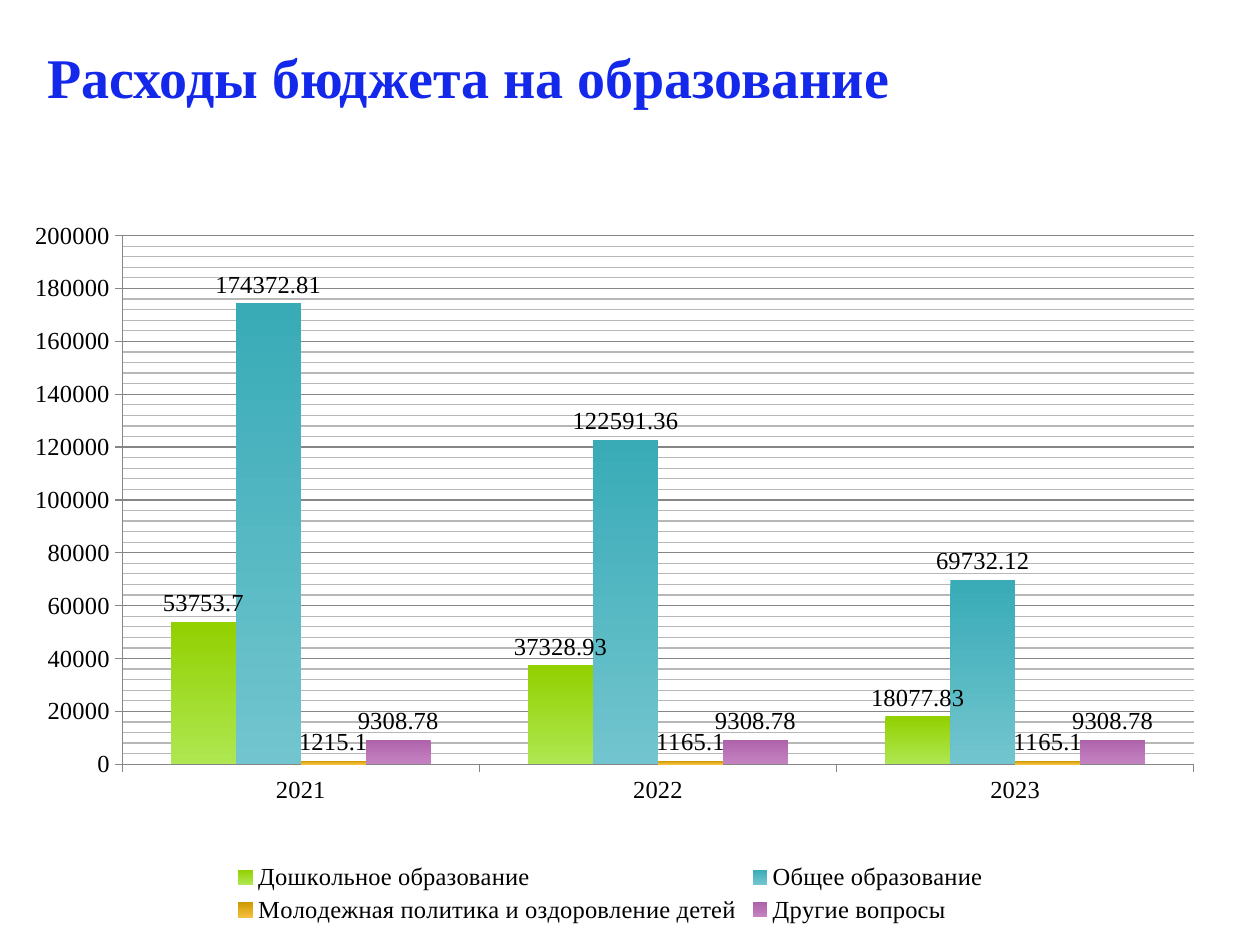
from copy import deepcopy

from lxml import etree
from pptx import Presentation
from pptx.chart.data import CategoryChartData
from pptx.dml.color import RGBColor
from pptx.enum.chart import XL_CHART_TYPE, XL_LABEL_POSITION, XL_LEGEND_POSITION, XL_TICK_MARK
from pptx.enum.text import MSO_ANCHOR
from pptx.util import Inches, Pt

COLUMNS = XL_CHART_TYPE.COLUMN_CLUSTERED
OUTSIDE_END = XL_LABEL_POSITION.OUTSIDE_END
BOTTOM = XL_LEGEND_POSITION.BOTTOM
TICK_OUT = XL_TICK_MARK.OUTSIDE
TOP = MSO_ANCHOR.TOP
FONT = "Times New Roman"
C_NS = "http://schemas.openxmlformats.org/drawingml/2006/chart"


def rgb(value):
    return RGBColor.from_string(value)


def set_line(line, color):
    line.color.rgb = rgb(color)
    line.width = Pt(0.75)


prs = Presentation()
prs.slide_width, prs.slide_height = Inches(10), Inches(7.5)
s = prs.slides.add_slide(prs.slide_layouts[6])

# Chart data
years = ["2021", "2022", "2023"]
spending = [
    # name, values, top colour, bottom colour
    ("Дошкольное образование", (53753.7, 37328.93, 18077.83), "92D000", "AEE751"),
    ("Общее образование", (174372.81, 122591.36, 69732.12), "38ABB7", "72C5CE"),
    ("Молодежная политика и оздоровление детей", (1215.1, 1165.1, 1165.1), "CC9A00", "F5BE3C"),
    ("Другие вопросы", (9308.78, 9308.78, 9308.78), "AE62AA", "C583C2"),
]
data = CategoryChartData()
data.categories = years
for name, values, _, _ in spending:
    data.add_series(name, values)

# Column chart
chart = s.shapes.add_chart(COLUMNS, Inches(0.12), Inches(1.7),
                           Inches(9.45), Inches(5.67), data).chart
chart.has_title = False
chart.font.name = FONT
chart.font.size = Pt(14)
chart.font.color.rgb = rgb("000000")
chart.has_legend = True
chart.legend.position = BOTTOM
chart.legend.include_in_layout = False

# Columns with a vertical gradient and value labels
plot = chart.plots[0]
plot.gap_width = 150
plot.overlap = 0
plot.vary_by_categories = False
for series, (_, _, top, bottom) in zip(plot.series, spending):
    series.invert_if_negative = False
    fill = series.format.fill
    fill.gradient()
    fill.gradient_angle = 270
    for stop, color in zip(fill.gradient_stops, (top, bottom)):
        stop.color.rgb = rgb(color)
    series.format.line.fill.background()
    labels = series.data_labels
    labels.show_value = True
    labels.position = OUTSIDE_END

# Axes and gridlines
for axis in (chart.category_axis, chart.value_axis):
    axis.major_tick_mark = TICK_OUT
    set_line(axis.format.line, "868686")
val_axis = chart.value_axis
for key, value in {"minimum_scale": 0, "maximum_scale": 200000,
                   "major_unit": 20000, "minor_unit": 4000,
                   "has_major_gridlines": True, "has_minor_gridlines": True}.items():
    setattr(val_axis, key, value)

# Minor gridlines take their lighter line format through the major ones
plot_area = chart._chartSpace.chart.plotArea
grid_line = val_axis.major_gridlines.format.line
set_line(grid_line, "B7B7B7")
major = plot_area.find(f".//{{{C_NS}}}majorGridlines")
minor = plot_area.find(f".//{{{C_NS}}}minorGridlines")
minor.append(deepcopy(major[0]))
set_line(grid_line, "868686")

# Fixed inner plot area
for old in plot_area.findall(f"{{{C_NS}}}layout"):
    plot_area.remove(old)
layout = etree.Element(f"{{{C_NS}}}layout")
manual = etree.SubElement(layout, f"{{{C_NS}}}manualLayout")
for tag, value in {"layoutTarget": "inner", "xMode": "edge", "yMode": "edge",
                   "x": 0.09, "y": 0.03, "w": 0.9, "h": 0.74}.items():
    etree.SubElement(manual, f"{{{C_NS}}}{tag}").set("val", str(value))
plot_area.insert(0, layout)

# Title
tf = s.shapes.add_textbox(Inches(0.28), Inches(0.29), Inches(9.21), Inches(1.26)).text_frame
tf.word_wrap = True
tf.vertical_anchor = TOP
r = tf.paragraphs[0].add_run()
r.text = "Расходы бюджета на образование"
for key, value in {"name": FONT, "size": Pt(32), "bold": True}.items():
    setattr(r.font, key, value)
r.font.color.rgb = rgb("1328EB")

prs.save("out.pptx")
